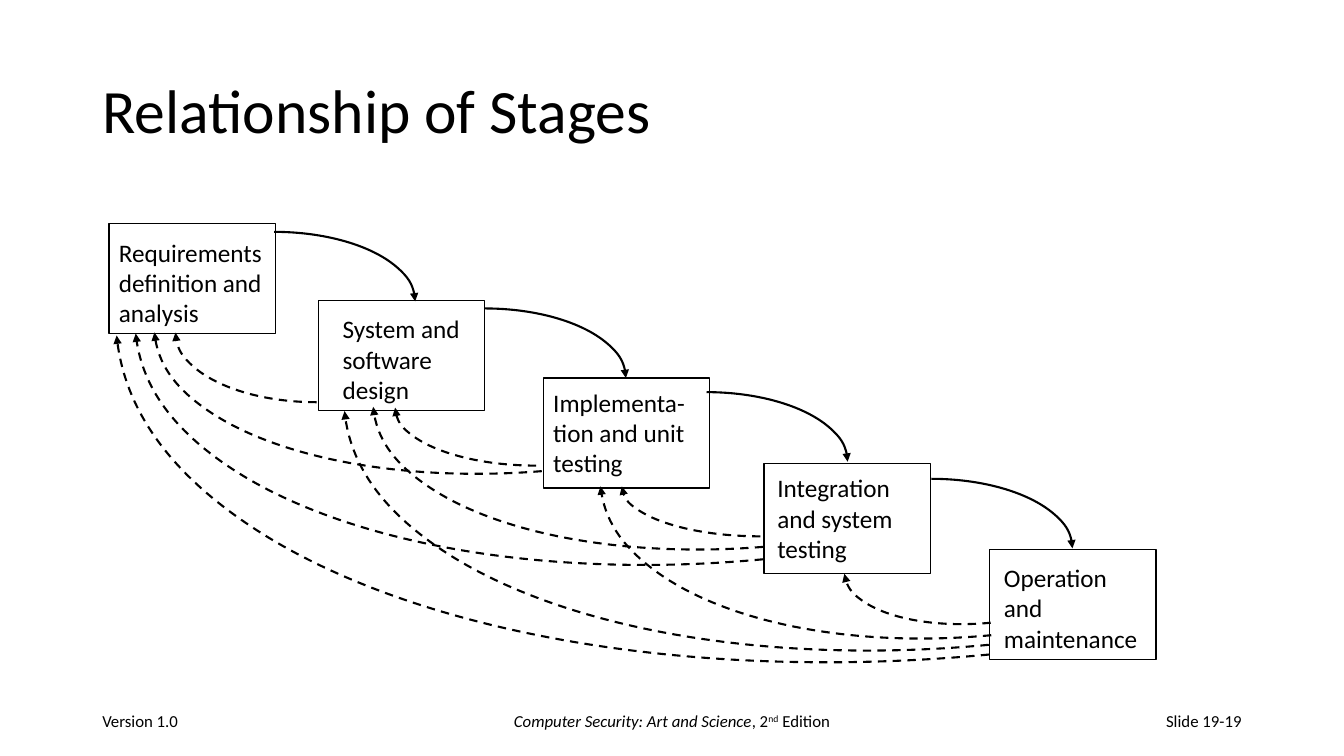
from lxml import etree
from pptx import Presentation
from pptx.dml.color import RGBColor
from pptx.enum.dml import MSO_LINE
from pptx.enum.shapes import MSO_SHAPE
from pptx.enum.text import MSO_ANCHOR, PP_ALIGN
from pptx.oxml.ns import qn
from pptx.util import Pt

BLACK = "000000"
FONT = "Calibri"
BOX_WIDTH, BOX_HEIGHT = 118.8, 78.5
FORWARD_WIDTH, FORWARD_HEIGHT = 201.6, 99.4


def set_font(paragraph, size, color=BLACK):
    paragraph.font.name = FONT
    paragraph.font.size = Pt(size)
    paragraph.font.color.rgb = RGBColor.from_string(color)


def add_outline(kind, left, top, width, height, weight):
    """Add an unfilled, shadowless shape with a black line."""
    shape = slide.shapes.add_shape(kind, Pt(left), Pt(top), Pt(width), Pt(height))
    shape.shadow.inherit = False
    shape.fill.background()
    shape.line.color.rgb = RGBColor.from_string(BLACK)
    shape.line.width = Pt(weight)
    return shape


prs = Presentation()
prs.slide_width, prs.slide_height = Pt(960), Pt(540)
slide = prs.slides.add_slide(prs.slide_layouts[5])

title = slide.shapes.title
title.left, title.top, title.width, title.height = Pt(66), Pt(28.8), Pt(828), Pt(104.4)
title.text_frame.text = "Relationship of Stages"
title.text_frame.vertical_anchor = MSO_ANCHOR.MIDDLE
heading = title.text_frame.paragraphs[0]
heading.alignment = PP_ALIGN.LEFT
heading.line_spacing = 0.9
set_font(heading, 44)

# Footer: left, width, alignment, runs as (text, italic, superscript)
footers = [
    (66, 216, PP_ALIGN.LEFT, [("Version 1.0", False, False)]),
    (318, 324, PP_ALIGN.CENTER, [
        ("Computer Security: Art and Science", True, False),
        (", 2", False, False),
        ("nd", False, True),
        (" Edition", False, False),
    ]),
    (678, 216, PP_ALIGN.RIGHT, [("Slide 19-19", False, False)]),
]
for left, width, alignment, pieces in footers:
    footer = slide.shapes.add_textbox(Pt(left), Pt(500.5), Pt(width), Pt(28.75))
    footer.text_frame.word_wrap = True
    footer.text_frame.vertical_anchor = MSO_ANCHOR.MIDDLE
    line = footer.text_frame.paragraphs[0]
    line.alignment = alignment
    set_font(line, 12)
    for text, italic, superscript in pieces:
        run = line.add_run()
        run.text = text
        if italic:
            run.font.italic = True
        if superscript:
            run._r.get_or_add_rPr().set("baseline", "30000")

# Stages: text, box left and top, text inset left and top
stages = [
    ("Requirements definition and analysis", 77.8, 159.8, 7.2, 9.4),
    ("System and software design", 227.5, 214.6, 17.2, 9.4),
    ("Implementa-tion and unit testing", 388.1, 270, 7.2, 6.5),
    ("Integration and system testing", 545.8, 331.2, 9.4, 6.5),
    ("Operation and maintenance", 707, 392.4, 10.1, 9.4),
]
for text, left, top, inset_left, inset_top in stages:
    stage = add_outline(MSO_SHAPE.RECTANGLE, left, top, BOX_WIDTH, BOX_HEIGHT, 1)
    frame = stage.text_frame
    frame.word_wrap = True
    frame.vertical_anchor = MSO_ANCHOR.TOP
    frame.margin_left, frame.margin_top = Pt(inset_left), Pt(inset_top)
    frame.margin_right, frame.margin_bottom = Pt(7.2), Pt(0)
    frame.text = text
    label = frame.paragraphs[0]
    label.alignment = PP_ALIGN.LEFT
    set_font(label, 18)

# Arcs: left, top, width, height, rotation
forward_starts = [(95, 165.6), (245.5, 220.3), (403.9, 280.1), (564.5, 342)]
forward_arcs = [(left, top, FORWARD_WIDTH, FORWARD_HEIGHT, 0) for left, top in forward_starts]
feedback_arcs = [
    (602.6, 355.7, 201.6, 89.3, 174.6),
    (444.2, 311.8, 198, 71.3, 180),
    (282.2, 249.8, 201.6, 82.8, 180),
    (125.3, 187.9, 201.6, 99.4, 180),
    (427.7, 190.1, 535.7, 264.2, 174.6),
    (265.7, 146.9, 539.3, 244.1, 175.4),
    (109.4, 95, 535.7, 241.9, 175.4),
    (244.1, 42.5, 884.9, 419, 174.6),
    (95, -5, 861.8, 405.4, 174.6),
    (80.6, -102.2, 1198.1, 571, 174.6),
]
for left, top, width, height, rotation in forward_arcs + feedback_arcs:
    arc = add_outline(MSO_SHAPE.ARC, left, top, width, height, 1.5)
    if rotation:
        arc.rotation = rotation
        arc.line.dash_style = MSO_LINE.DASH
    etree.SubElement(arc.line._get_or_add_ln(), qn("a:tailEnd"), type="triangle")

prs.save("out.pptx")
